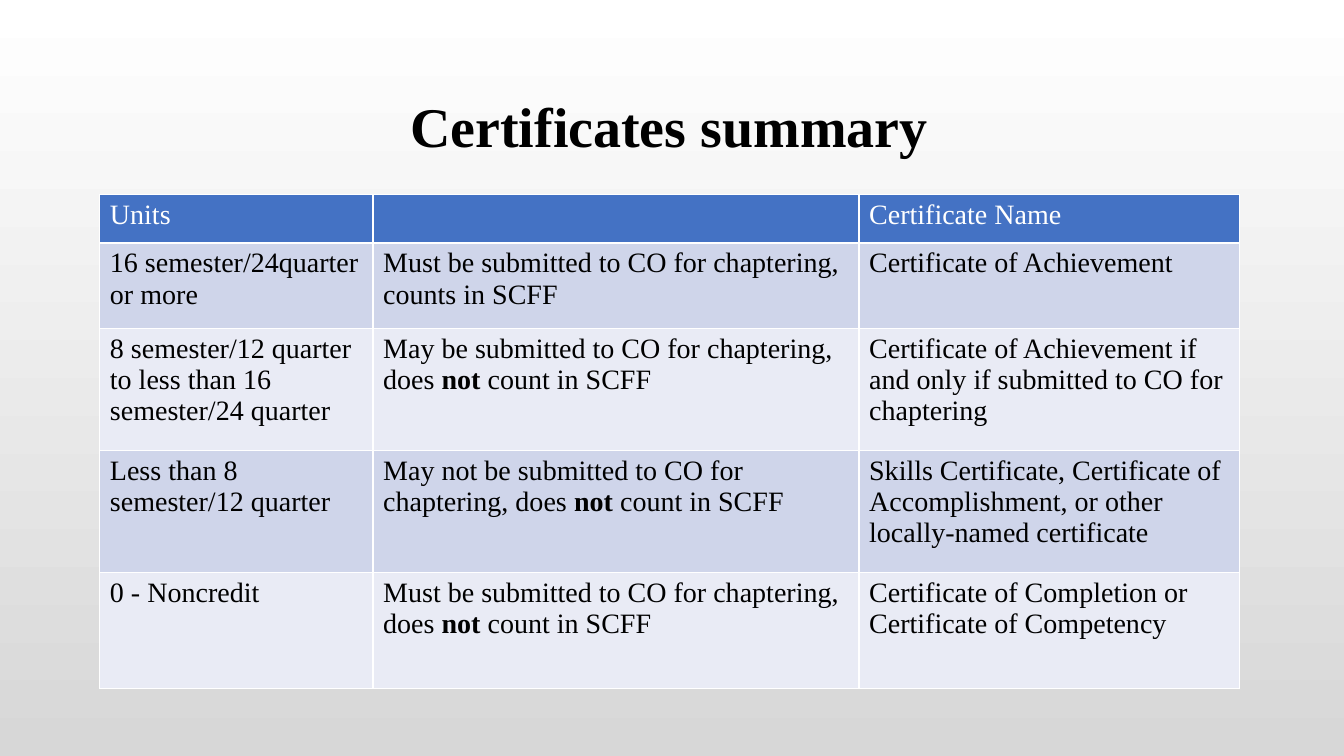
from pptx import Presentation
from pptx import util as u
from pptx.dml.color import RGBColor
from pptx.enum import text
from pptx.oxml import parse_xml
from pptx.oxml.ns import nsdecls

SLIDE_W, SLIDE_H = u.Inches(13.33), u.Inches(7.5)
FONT = "Times New Roman"
BLACK, WHITE, HEADER = "000000", "FFFFFF", "4472C4"
BANDS = ("CFD5EA", "E9EBF5")

# Lengths are percentages of the slide's width and height.
TITLE_AREA = (18.08, 8.4, 63.4, 17.33)
TABLE_LEFT, TABLE_TOP = 7.43, 25.73
COLUMNS = (20.33, 36.16, 28.28)
ROWS = (6.4, 11.33, 16.13, 16.13, 15.33)

# Asterisks enclose bold words.
CERTIFICATES = (
    ("Units", "", "Certificate Name"),
    ("16 semester/24quarter or more",
     "Must be submitted to CO for chaptering, counts in SCFF",
     "Certificate of Achievement"),
    ("8 semester/12 quarter to less than 16 semester/24 quarter",
     "May be submitted to CO for chaptering, does *not* count in SCFF",
     "Certificate of Achievement if and only if submitted to CO for chaptering"),
    ("Less than 8 semester/12 quarter",
     "May not be submitted to CO for chaptering, does *not* count in SCFF",
     "Skills Certificate, Certificate of Accomplishment, or other locally-named certificate"),
    ("0 - Noncredit",
     "Must be submitted to CO for chaptering, does *not* count in SCFF",
     "Certificate of Completion or Certificate of Competency"),
)


def rgb(code):
    return RGBColor.from_string(code)


def across(share):
    return u.Emu(round(SLIDE_W * share / 100))


def down(share):
    return u.Emu(round(SLIDE_H * share / 100))


def write(para, wording, size, color):
    """Add runs, making the words between asterisks bold."""
    for index, part in enumerate(wording.split("*")):
        if part:
            span = para.add_run()
            span.text = part
            span.font.name = FONT
            span.font.size = u.Pt(size)
            span.font.bold = index % 2 == 1
            span.font.color.rgb = rgb(color)


def paint_background(page):
    fill = page.background.fill
    fill.gradient()
    fill.gradient_angle = 270
    for stop, color, position in zip(fill.gradient_stops, (WHITE, "D7D7D7"), (0, 1)):
        stop.color.rgb = rgb(color)
        stop.position = position


def add_title(page, wording):
    left, top, width, height = TITLE_AREA
    box = page.shapes.add_textbox(across(left), down(top), across(width), down(height))
    frame = box.text_frame
    frame.word_wrap = True
    frame.vertical_anchor = text.MSO_ANCHOR.MIDDLE
    para = frame.paragraphs[0]
    para.alignment = text.PP_ALIGN.CENTER
    para.line_spacing = 0.9
    write(para, wording, 40, BLACK)


def outline(cell, color, points):
    properties = cell._tc.get_or_add_tcPr()
    for index, side in enumerate(("lnL", "lnR", "lnT", "lnB")):
        properties.insert(index, parse_xml(
            f'<a:{side} {nsdecls("a")} w="{u.Pt(points)}"><a:solidFill>'
            f'<a:srgbClr val="{color}"/></a:solidFill></a:{side}>'))


def add_certificate_table(page):
    table = page.shapes.add_table(
        len(ROWS), len(COLUMNS), across(TABLE_LEFT), down(TABLE_TOP),
        across(sum(COLUMNS)), down(sum(ROWS))).table
    for column, share in zip(table.columns, COLUMNS):
        column.width = across(share)
    for index, (row, share, wordings) in enumerate(zip(table.rows, ROWS, CERTIFICATES)):
        row.height = down(share)
        fill, color = (BANDS[(index - 1) % 2], BLACK) if index else (HEADER, WHITE)
        for cell, wording in zip(row.cells, wordings):
            cell.fill.solid()
            cell.fill.fore_color.rgb = rgb(fill)
            outline(cell, WHITE, 1)
            write(cell.text_frame.paragraphs[0], wording, 20, color)


def main():
    deck = Presentation()
    deck.slide_width, deck.slide_height = SLIDE_W, SLIDE_H
    page = deck.slides.add_slide(deck.slide_layouts[6])
    paint_background(page)
    add_title(page, "*Certificates summary*")
    add_certificate_table(page)
    deck.save("out.pptx")


if __name__ == "__main__":
    main()
